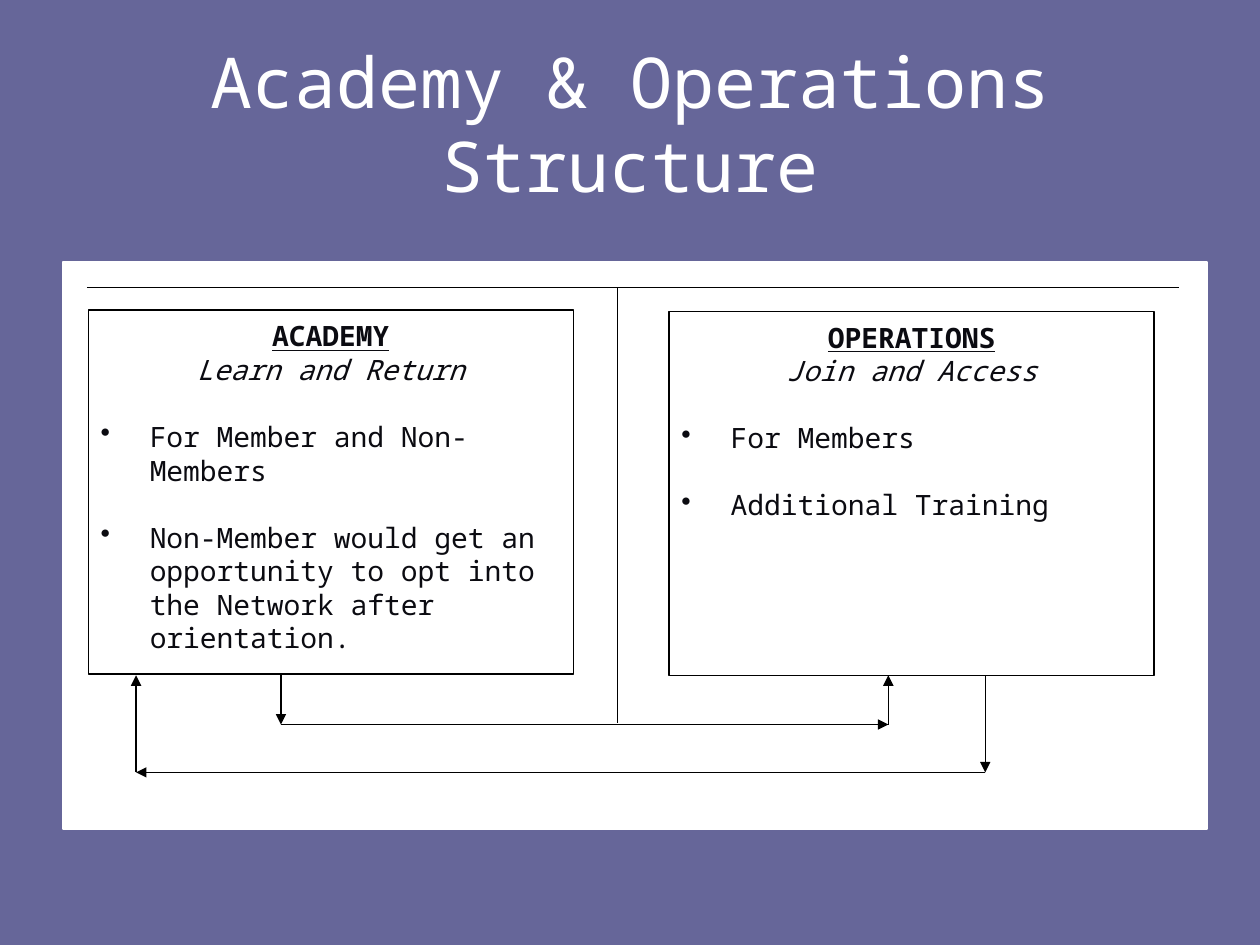
from lxml import etree
from pptx import Presentation
from pptx.dml.color import RGBColor
from pptx.enum import shapes, text
from pptx.oxml.ns import qn
from pptx.util import Inches, Pt

# Content
TITLE = "Academy & Operations Structure"
BOXES = [
    dict(at=(5.31, 2.47), name="OPERATIONS", motto="Join and Access",
         points=["For Members", "Additional Training"]),
    dict(at=(0.7, 2.46), name="ACADEMY", motto="Learn and Return",
         points=["For Member and Non-Members",
                 "Non-Member would get an opportunity to opt into "
                 "the Network after orientation."]),
]
BOX_SIZE = (3.85, 2.89)

# Each route is a chain of points, with an arrowhead on every leg
ROUTES = [
    [(2.23, 5.36), (2.23, 5.75), (7.05, 5.75), (7.05, 5.36)],
    [(7.82, 5.36), (7.82, 6.13), (1.08, 6.13), (1.08, 5.36)],
]
DIVIDERS = [((0.69, 2.28), (9.36, 2.28)), ((4.9, 2.28), (4.9, 5.74))]

COLORS = dict(background="666699", panel="FFFFFF", title="FFFFFF",
              line="000000", text="0B0B11")
FONT = "Noto Sans Mono"
BODY_SIZE, TITLE_SIZE = 16, 40
LEADING = 1.2
BULLET_INDENT = 0.39


def rgb(name):
    return RGBColor.from_string(COLORS[name])


def add_rect(slide, left, top, width, height, line):
    sp = slide.shapes.add_shape(shapes.MSO_SHAPE.RECTANGLE, Inches(left),
                                Inches(top), Inches(width), Inches(height))
    sp.shadow.inherit = False
    sp.fill.solid()
    sp.fill.fore_color.rgb = rgb("panel")
    sp.line.color.rgb = rgb(line)
    sp.line.width = Pt(0.75)
    return sp


def add_line(slide, start, end, arrow=False):
    cn = slide.shapes.add_connector(
        shapes.MSO_CONNECTOR.STRAIGHT, *(Inches(v) for v in start + end))
    cn.line.color.rgb = rgb("line")
    cn.line.width = Pt(0.75)
    if arrow:
        etree.SubElement(cn.line._get_or_add_ln(), qn("a:tailEnd"), type="triangle")
    etree.SubElement(cn._element.spPr, qn("a:effectLst"))


def style(p, content, size, color, align):
    p.text = content
    p.alignment = align
    p.line_spacing = Pt(size * LEADING)
    p.font.name = FONT
    p.font.size = Pt(size)
    p.font.color.rgb = rgb(color)
    return p


def add_bullet(p):
    pPr = p._p.get_or_add_pPr()
    pPr.set("marL", str(Inches(BULLET_INDENT)))
    pPr.set("indent", str(-Inches(BULLET_INDENT)))
    bullet = etree.Element(qn("a:buChar"), char="•")
    pPr.find(qn("a:defRPr")).addprevious(bullet)


def add_box(slide, box):
    tf = add_rect(slide, *box["at"], *BOX_SIZE, "line").text_frame
    tf.word_wrap = True
    tf.vertical_anchor = text.MSO_ANCHOR.TOP
    tf.margin_top = Inches(0.07)
    center, left = text.PP_ALIGN.CENTER, text.PP_ALIGN.LEFT

    heading = style(tf.paragraphs[0], box["name"], BODY_SIZE, "text", center)
    heading.font.bold = heading.font.underline = True
    motto = style(tf.add_paragraph(), box["motto"], BODY_SIZE, "text", center)
    motto.font.italic = True
    for point in box["points"]:
        p = style(tf.add_paragraph(), point, BODY_SIZE, "text", left)
        p.space_before = Pt(BODY_SIZE * LEADING)
        add_bullet(p)


prs = Presentation()
prs.slide_width, prs.slide_height = Inches(10), Inches(7.5)
slide = prs.slides.add_slide(prs.slide_layouts[6])
slide.background.fill.solid()
slide.background.fill.fore_color.rgb = rgb("background")

# White panel and title
add_rect(slide, 0.5, 2.08, 9.08, 4.5, "panel")
tf = slide.shapes.add_textbox(Inches(0.5), Inches(0.3), Inches(9),
                              Inches(1.25)).text_frame
tf.word_wrap = True
tf.vertical_anchor = text.MSO_ANCHOR.MIDDLE
tf.margin_top = Inches(0.15)
style(tf.paragraphs[0], TITLE, TITLE_SIZE, "title", text.PP_ALIGN.CENTER)

# Dividers, boxes and the routes between them
for start, end in DIVIDERS:
    add_line(slide, start, end)
for box in BOXES:
    add_box(slide, box)
for route in ROUTES:
    for start, end in zip(route, route[1:]):
        add_line(slide, start, end, arrow=True)

prs.save("out.pptx")
